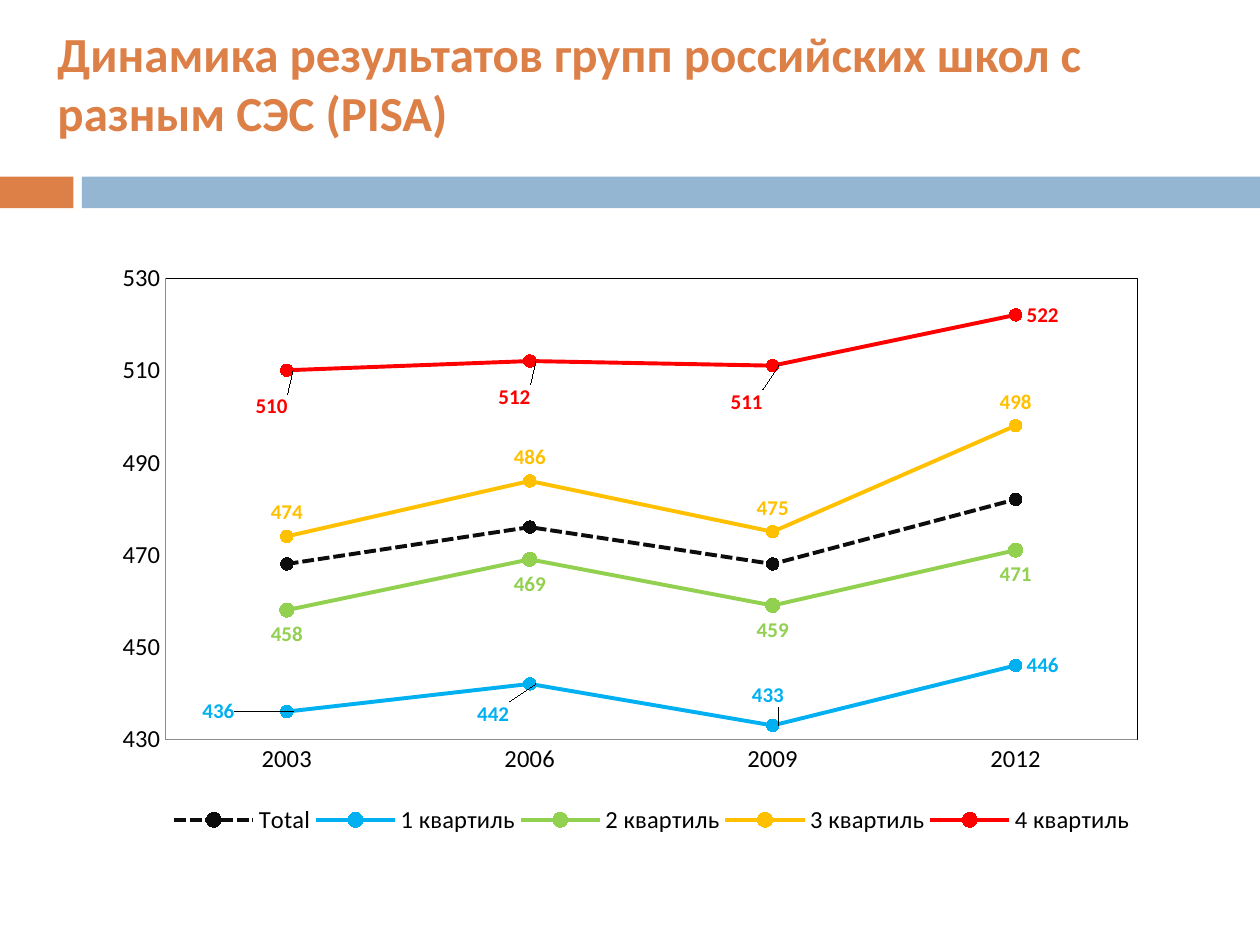
from dataclasses import dataclass

from lxml import etree
from pptx import Presentation
from pptx.chart.data import CategoryChartData
from pptx.dml.color import RGBColor as RGB
from pptx.enum.chart import XL_CHART_TYPE as ChartType
from pptx.enum.chart import XL_LABEL_POSITION as LabelPos
from pptx.enum.chart import XL_LEGEND_POSITION as LegendPos
from pptx.enum.chart import XL_MARKER_STYLE as Marker
from pptx.enum.chart import XL_TICK_MARK as Tick
from pptx.enum.dml import MSO_LINE as Dash
from pptx.enum.shapes import MSO_SHAPE as Shape
from pptx.enum.text import MSO_ANCHOR as Anchor
from pptx.oxml import parse_xml
from pptx.oxml.ns import nsdecls, qn
from pptx.util import Cm, Pt


@dataclass(frozen=True)
class Theme:
    font: str = "Calibri"
    accent: str = "DD8047"
    band: str = "94B6D2"
    text: str = "000000"
    axis: str = "8C8C8C"
    title_size: int = 28
    axis_size: int = 14
    label_size: int = 12
    line_width: float = 2.25


@dataclass(frozen=True)
class Line:
    name: str
    values: tuple
    color: str
    label_pos: object = None
    label_shifts: tuple = ()
    marker_size: int = 7
    dash: object = None


THEME = Theme()
YEARS = ("2003", "2006", "2009", "2012")
LINES = (
    Line("Total", (468, 476, 468, 482), "0D0D0D", dash=Dash.SQUARE_DOT),
    Line("1 квартиль", (436, 442, 433, 446), "00B0F0", LabelPos.RIGHT,
         ((-0.09, 0), (-0.06, 0.05), (-0.03, -0.05))),
    Line("2 квартиль", (458, 469, 459, 471), "92D050", LabelPos.BELOW,
         marker_size=8),
    Line("3 квартиль", (474, 486, 475, 498), "FFC000", LabelPos.ABOVE),
    Line("4 квартиль", (510, 512, 511, 522), "FF0000", LabelPos.RIGHT,
         ((-0.04, 0.06), (-0.04, 0.06), (-0.05, 0.06))),
)


def rgb(color):
    return RGB.from_string(color)


def set_font(font, size, color, bold=False):
    font.name = THEME.font
    font.size = Pt(size)
    font.bold = bold
    font.color.rgb = rgb(color)


def add_bar(s, left, top, width, height, color):
    sp = s.shapes.add_shape(Shape.RECTANGLE, left, top, width, height)
    sp.shadow.inherit = False
    sp.fill.solid()
    sp.fill.fore_color.rgb = rgb(color)
    sp.line.fill.background()


def add_title(s, text):
    tf = s.shapes.add_textbox(Cm(0.91), Cm(0.93), Cm(23.6), Cm(1.47)).text_frame
    tf.word_wrap = True
    tf.vertical_anchor = Anchor.MIDDLE
    p = tf.paragraphs[0]
    p.text = text
    set_font(p.font, THEME.title_size, THEME.accent, bold=True)


def set_layout(parent, index, **values):
    for old in parent.findall(qn("c:layout")):
        parent.remove(old)
    layout = parse_xml(f"<c:layout {nsdecls('c')}/>")
    manual = etree.SubElement(layout, qn("c:manualLayout"))
    for tag, value in values.items():
        etree.SubElement(manual, qn(f"c:{tag}")).set("val", str(value))
    parent.insert(index, layout)


def style_axis(axis):
    axis.has_major_gridlines = False
    axis.major_tick_mark = axis.minor_tick_mark = Tick.NONE
    axis.format.line.color.rgb = rgb(THEME.axis)
    axis.format.line.width = Pt(0.25)
    set_font(axis.tick_labels.font, THEME.axis_size, THEME.text)


def style_labels(series, line):
    labels = series.data_labels
    labels.show_value = True
    labels.position = line.label_pos
    set_font(labels.font, THEME.label_size, line.color, bold=True)
    for i, (x, y) in enumerate(line.label_shifts):
        label = series.points[i].data_label
        label.position = line.label_pos
        set_font(label.font, THEME.label_size, line.color, bold=True)
        set_layout(labels._element.findall(qn("c:dLbl"))[i], 1, x=x, y=y)
    for leader in labels._element.findall(qn("c:showLeaderLines")):
        labels._element.remove(leader)
    labels._element.append(parse_xml(
        f'<c:extLst {nsdecls("c")}>'
        '<c:ext uri="{CE6537A1-D6FC-4f65-9D91-7224C49458BB}" xmlns:c15='
        '"http://schemas.microsoft.com/office/drawing/2012/chart">'
        '<c15:showLeaderLines val="0"/></c:ext></c:extLst>'))


def style_series(series, line):
    series.smooth = False
    series.format.line.color.rgb = rgb(line.color)
    series.format.line.width = Pt(THEME.line_width)
    if line.dash:
        series.format.line.dash_style = line.dash
    marker = series.marker
    marker.style = Marker.CIRCLE
    marker.size = line.marker_size
    marker.format.fill.solid()
    marker.format.fill.fore_color.rgb = rgb(line.color)
    marker.format.line.color.rgb = rgb(line.color)
    if line.label_pos is not None:
        style_labels(series, line)


def frame_plot(chart):
    area = chart.plots[0]._element.getparent()
    set_layout(area, 0, layoutTarget="inner", xMode="edge", yMode="edge",
               x=0.067, y=0.039, w=0.915, h=0.763)
    area.append(parse_xml(
        f'<c:spPr {nsdecls("c", "a")}><a:noFill/><a:ln w="3175"><a:solidFill>'
        f'<a:srgbClr val="{THEME.text}"/></a:solidFill></a:ln></c:spPr>'))


def add_line_chart(s):
    data = CategoryChartData(number_format="#,##0")
    data.categories = YEARS
    for line in LINES:
        data.add_series(line.name, line.values)
    chart = s.shapes.add_chart(ChartType.LINE_MARKERS, Cm(1.9), Cm(5.13),
                               Cm(21.41), Cm(12.19), data).chart
    chart.has_title = False
    set_font(chart.font, 10, THEME.text)
    chart.plots[0].vary_by_categories = False
    for series, line in zip(chart.plots[0].series, LINES):
        style_series(series, line)
    style_axis(chart.category_axis)
    axis = chart.value_axis
    style_axis(axis)
    axis.minimum_scale, axis.maximum_scale, axis.major_unit = 430, 530, 20
    axis.tick_labels.number_format = "#,##0"
    axis.tick_labels.number_format_is_linked = False
    chart.has_legend = True
    legend = chart.legend
    legend.position = LegendPos.BOTTOM
    legend.include_in_layout = False
    set_font(legend.font, THEME.axis_size, THEME.text)
    set_layout(legend._element, 1, xMode="edge", yMode="edge",
               x=0.07, y=0.9, w=0.91, h=0.07)
    frame_plot(chart)


def main():
    prs = Presentation()
    prs.slide_width, prs.slide_height = Cm(25.4), Cm(19.05)
    s = prs.slides.add_slide(prs.slide_layouts[6])
    top, height, split = Cm(3.56), Cm(0.64), Cm(1.65)
    add_bar(s, 0, top, Cm(1.48), height, THEME.accent)
    add_bar(s, split, top, prs.slide_width - split, height, THEME.band)
    add_line_chart(s)
    add_title(s, "Динамика результатов групп российских школ с разным СЭС (PISA)")
    prs.save("out.pptx")


if __name__ == "__main__":
    main()
